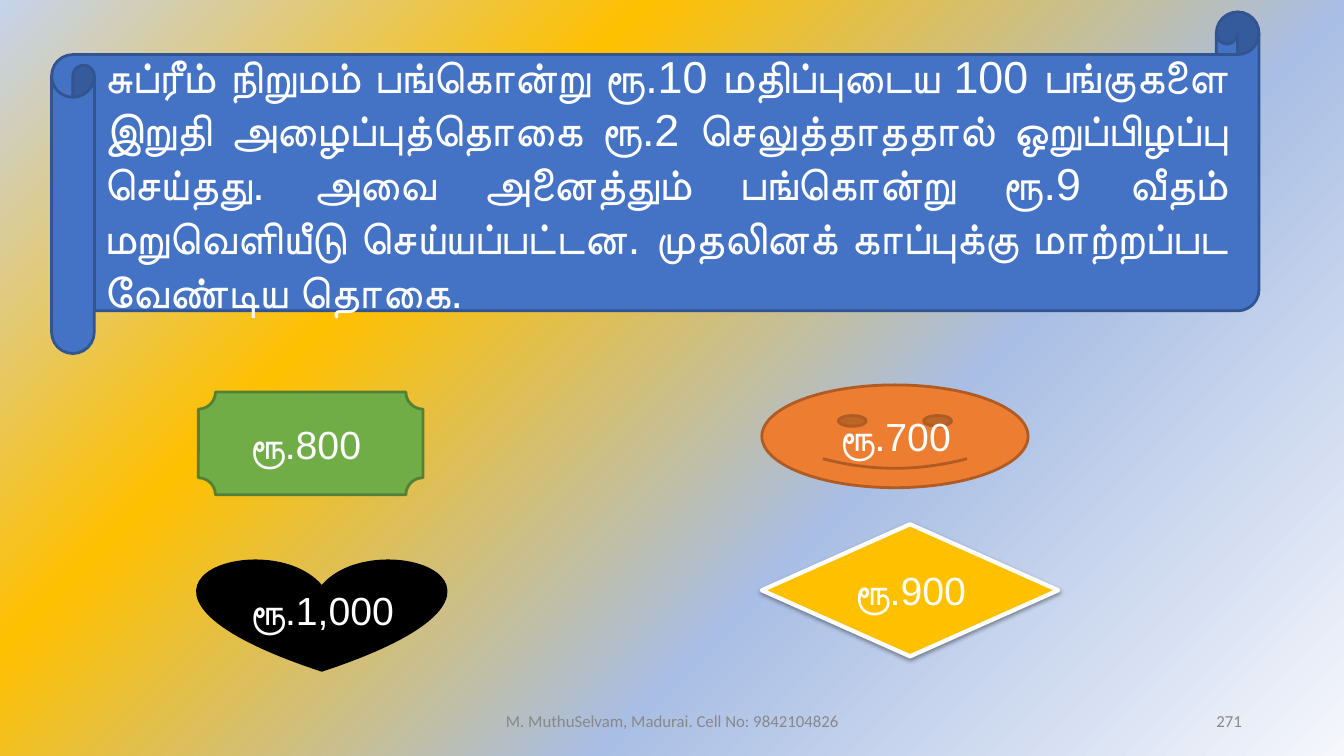
from pptx import Presentation
from pptx.dml.color import RGBColor
from pptx.enum.shapes import MSO_SHAPE
from pptx.enum.text import MSO_ANCHOR, PP_ALIGN
from pptx.oxml import parse_xml
from pptx.oxml.ns import nsdecls
from pptx.util import Cm, Pt

SCROLL, PLAQUE, SMILEY = MSO_SHAPE.HORIZONTAL_SCROLL, MSO_SHAPE.PLAQUE, MSO_SHAPE.SMILEY_FACE
HEART, DIAMOND = MSO_SHAPE.HEART, MSO_SHAPE.DIAMOND
MIDDLE = MSO_ANCHOR.MIDDLE
CENTER, RIGHT, JUSTIFY = PP_ALIGN.CENTER, PP_ALIGN.RIGHT, PP_ALIGN.JUSTIFY

COLORS = {
    "blue": "4472C4", "blue edge": "325491",
    "green": "70AD47", "green edge": "538035",
    "orange": "ED7D31", "orange edge": "AF5C24",
    "gold": "FFC000", "black": "000000", "white": "FFFFFF", "grey": "888888",
    "mist": "F5F7FC", "sky": "A9BEE4", "pale blue": "C5D3ED",
}


def color(name):
    return RGBColor.from_string(COLORS[name])


def write(box, text, align, size, font, ink):
    frame = box.text_frame
    frame.word_wrap = True
    frame.vertical_anchor = MIDDLE
    paragraph = frame.paragraphs[0]
    paragraph.text = text
    paragraph.alignment = align
    paragraph.font.size = Pt(size)
    paragraph.font.name = font
    paragraph.font.color.rgb = color(ink)


deck = Presentation()
deck.slide_width, deck.slide_height = Cm(33.87), Cm(19.05)
page = deck.slides.add_slide(deck.slide_layouts[6])

# Background gradient, spreading from the lower right corner
page.background.fill.solid()
background = page.background.fill._xPr
stops = "".join(
    f'<a:gs pos="{percent * 1000}"><a:srgbClr val="{COLORS[name]}"/></a:gs>'
    for percent, name in [(0, "mist"), (36, "sky"), (69, "gold"), (100, "pale blue")]
)
gradient = parse_xml(
    f'<a:gradFill {nsdecls("a")} rotWithShape="1"><a:gsLst>{stops}</a:gsLst>'
    '<a:path path="circle"><a:fillToRect l="100000" t="100000"/></a:path>'
    '<a:tileRect r="-100000" b="-100000"/></a:gradFill>'
)
background.replace(background[0], gradient)

# Question scroll and the four answers
question = (
    "சுப்ரீம் நிறுமம் பங்கொன்று ரூ.10 மதிப்புடைய 100 பங்குகளை இறுதி அழைப்புத்தொகை "
    "ரூ.2 செலுத்தாததால் ஒறுப்பிழப்பு செய்தது. அவை அனைத்தும் பங்கொன்று ரூ.9 வீதம் "
    "மறுவெளியீடு செய்யப்பட்டன. முதலினக் காப்புக்கு மாற்றப்பட வேண்டிய தொகை."
)
LEFT_COLUMN, RIGHT_COLUMN = 5, 19.2
cards = [
    (SCROLL, 1.3, 0.3, 30.43, 8.61, "blue", "blue edge", 2, question, JUSTIFY, 32),
    (PLAQUE, LEFT_COLUMN, 9.88, 5.66, 2.59, "green", "green edge", 2, "ரூ.800 ", CENTER, 28),
    (SMILEY, RIGHT_COLUMN, 9.7, 6.71, 2.59, "orange", "orange edge", 2, "ரூ.700", CENTER, 28),
    (HEART, LEFT_COLUMN, 14.1, 6.22, 2.79, "black", "black", 2, "ரூ.1,000", CENTER, 28),
    (DIAMOND, RIGHT_COLUMN, 13.21, 7.47, 3.33, "gold", "white", 3, "ரூ.900", CENTER, 28),
]
for kind, left, top, width, height, fill, edge, weight, text, align, size in cards:
    card = page.shapes.add_shape(kind, Cm(left), Cm(top), Cm(width), Cm(height))
    card.shadow.inherit = False
    card.fill.solid()
    card.fill.fore_color.rgb = color(fill)
    card.line.color.rgb = color(edge)
    card.line.width = Pt(weight)
    write(card, text, align, size, "Arial", "white")
    # Only the diamond casts a soft shadow
    if kind == DIAMOND:
        card._element.spPr.find("{*}effectLst").append(parse_xml(
            f'<a:outerShdw {nsdecls("a")} blurRad="{Pt(3.1)}" dist="{Pt(1.6)}" dir="5400000" '
            f'rotWithShape="0"><a:srgbClr val="{COLORS["black"]}"><a:alpha val="38000"/>'
            '</a:srgbClr></a:outerShdw>'
        ))

# Footer and page number
for left, width, text, align in [
    (11.23, 11.43, "M. MuthuSelvam, Madurai. Cell No: 9842104826", CENTER),
    (23.93, 7.62, "271", RIGHT),
]:
    box = page.shapes.add_textbox(Cm(left), Cm(17.65), Cm(width), Cm(1.02))
    write(box, text, align, 12, "Calibri", "grey")

deck.save("out.pptx")
